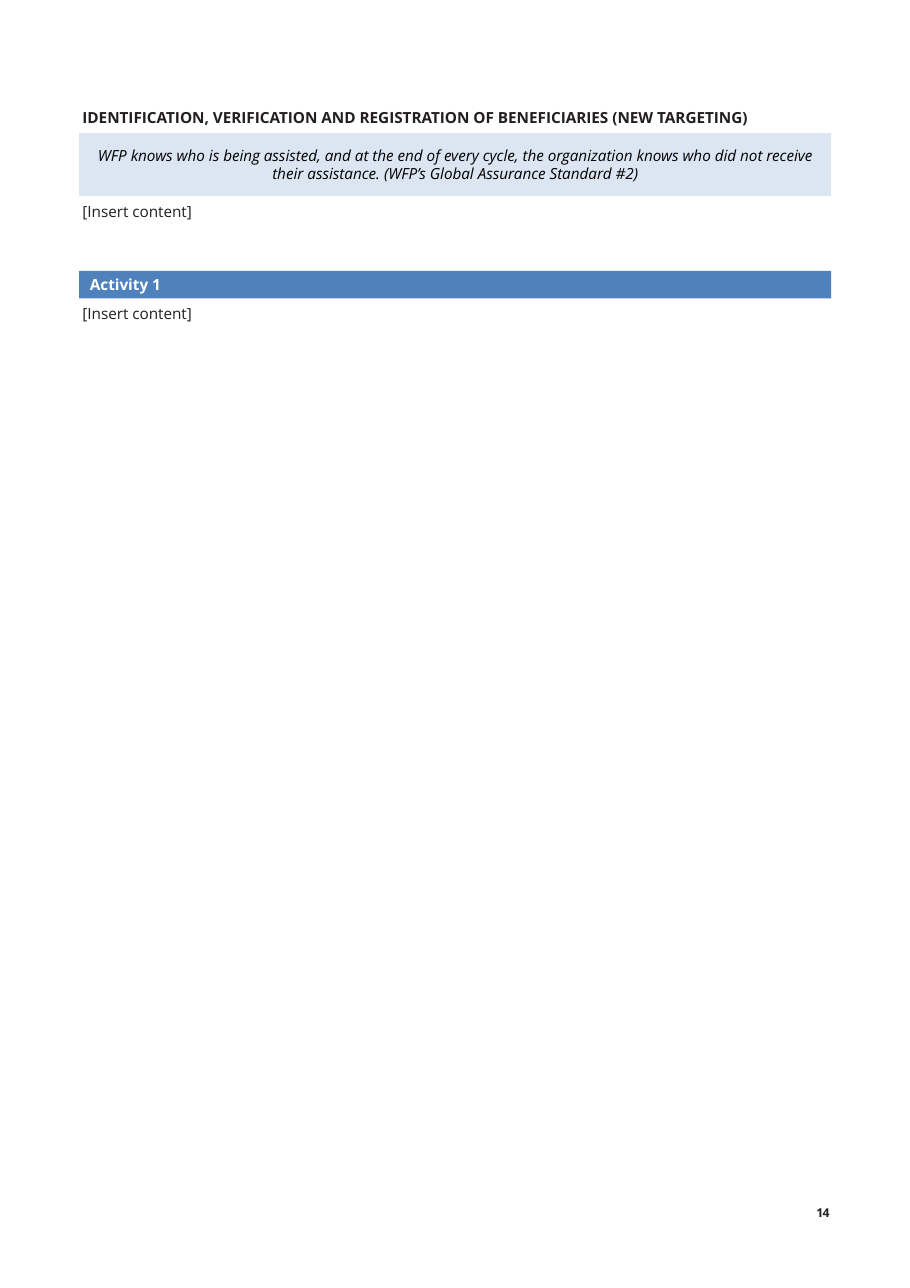
from pptx import Presentation
from pptx.dml.color import RGBColor
from pptx.enum.shapes import MSO_SHAPE
from pptx.enum.text import MSO_ANCHOR, MSO_AUTO_SIZE, PP_ALIGN
from pptx.util import Inches, Pt

LEFT, WIDTH = 8.7, 82.65
INK = "231F20"


def color(value):
    return RGBColor.from_string(value)


def write(tf, text, size=10, fill=INK, bold=False, italic=False, align=PP_ALIGN.LEFT,
          indent=0, line=None, after=None, tracking=None):
    tf.word_wrap = True
    p = tf.paragraphs[0]
    p.alignment = align
    if indent:
        p._p.get_or_add_pPr().set("marL", str(Inches(indent)))
    if line:
        p.line_spacing = line
    if after:
        p.space_after = Pt(after)
    r = p.add_run()
    r.text = text
    r.font.name = "Open Sans"
    r.font.size = Pt(size)
    r.font.bold = bold
    r.font.italic = italic
    r.font.color.rgb = color(fill)
    if tracking:
        r._r.get_or_add_rPr().set("spc", str(int(tracking * 100)))


class Page:
    def __init__(self, prs):
        self.prs = prs
        self.s = prs.slides.add_slide(prs.slide_layouts[6])

    def box(self, left, top, width, height):
        w, h = self.prs.slide_width, self.prs.slide_height
        return [int(share * side / 100)
                for share, side in ((left, w), (top, h), (width, w), (height, h))]

    def label(self, text, left, top, width, height, inset, **fmt):
        tf = self.s.shapes.add_textbox(*self.box(left, top, width, height)).text_frame
        tf.margin_left = tf.margin_right = tf.margin_bottom = 0
        tf.margin_top = Inches(inset)
        tf.auto_size = MSO_AUTO_SIZE.SHAPE_TO_FIT_TEXT
        write(tf, text, **fmt)

    def body(self, text, top, **fmt):
        self.label(text, LEFT, top, WIDTH, 1.8, 0.01, align=PP_ALIGN.JUSTIFY,
                   indent=0.03, line=1.25, after=6, **fmt)

    def band(self, text, top, height, back, **fmt):
        sp = self.s.shapes.add_shape(MSO_SHAPE.RECTANGLE, *self.box(LEFT, top, WIDTH, height))
        sp.shadow.inherit = False
        sp.fill.solid()
        sp.fill.fore_color.rgb = color(back)
        sp.line.fill.background()
        sp.text_frame.vertical_anchor = MSO_ANCHOR.MIDDLE
        write(sp.text_frame, text, **fmt)


def main():
    prs = Presentation()
    prs.slide_width, prs.slide_height = Inches(8.26), Inches(11.69)
    page = Page(prs)
    page.label("14", 88.5, 93.41, 3.5, 1.54, 0.02, size=8, bold=True,
               indent=0.1, tracking=-0.5)
    page.body("IDENTIFICATION, VERIFICATION AND REGISTRATION OF BENEFICIARIES (NEW TARGETING)",
              7.96, bold=True)
    page.band("WFP knows who is being assisted, and at the end of every cycle, the organization "
              "knows who did not receive their assistance. (WFP’s Global Assurance Standard #2)",
              10.33, 4.88, "DCE6F2", fill="000000", italic=True, align=PP_ALIGN.CENTER)
    page.band("Activity 1", 21.04, 2.14, "4F81BD", fill="FFFFFF", bold=True)
    for top in (15.23, 23.18):
        page.body("[Insert content]", top)
    prs.save("out.pptx")


if __name__ == "__main__":
    main()
